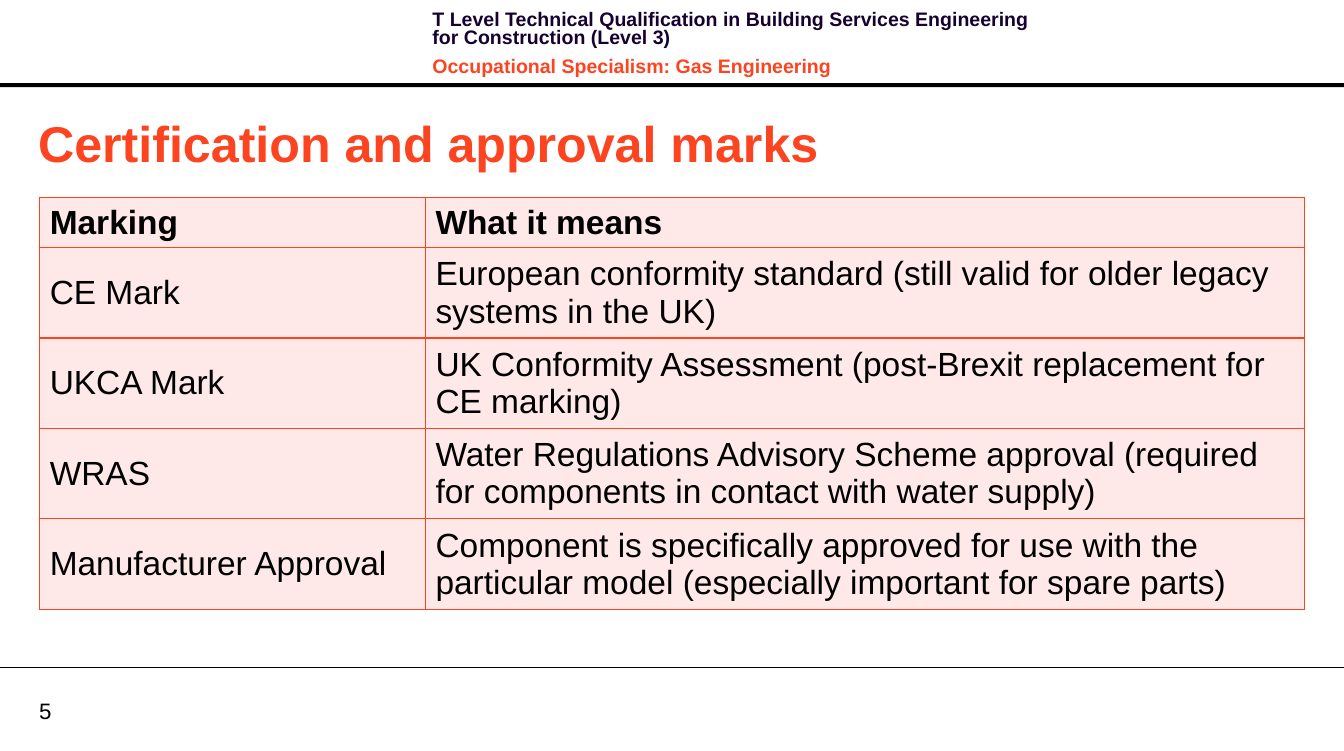
from lxml.etree import SubElement
from pptx import Presentation
from pptx.dml.color import RGBColor
from pptx.enum.shapes import MSO_CONNECTOR, MSO_SHAPE
from pptx.enum.text import MSO_ANCHOR
from pptx.oxml.ns import qn
from pptx.util import Pt

COLORS = {
    "black": "000000",
    "navy": "170130",
    "orange": "FC4421",
    "blush": "FEE9E8",
}
WIDTH, HEIGHT = 964, 538.6
HEADER_LINES = [
    ("T Level Technical Qualification in Building Services Engineering for Construction (Level 3)", "navy"),
    ("Occupational Specialism: Gas Engineering", "orange"),
]
MARKINGS = [
    ("Marking", "What it means"),
    ("CE Mark", "European conformity standard (still valid for older legacy systems in the UK)"),
    ("UKCA Mark", "UK Conformity Assessment (post-Brexit replacement for CE marking)"),
    ("WRAS", "Water Regulations Advisory Scheme approval (required for components in contact with water supply)"),
    ("Manufacturer Approval", "Component is specifically approved for use with the particular model "
                              "(especially important for spare parts)"),
]


def color(name):
    return RGBColor.from_string(COLORS[name])


class SlideBuilder:
    font_name = "Arial"

    def __init__(self, slide):
        self.slide = slide

    def style(self, paragraph, size, color_name, bold=False):
        for run in paragraph.runs:
            run.font.name = self.font_name
            run.font.size = Pt(size)
            run.font.bold = bold
            run.font.color.rgb = color(color_name)

    def bar(self, left, top, width, height, color_name):
        shape = self.slide.shapes.add_shape(
            MSO_SHAPE.RECTANGLE, Pt(left), Pt(top), Pt(width), Pt(height))
        shape.shadow.inherit = False
        shape.fill.solid()
        shape.fill.fore_color.rgb = color(color_name)
        shape.line.fill.background()

    def rule(self, top, color_name, weight):
        """Draw a horizontal line across the whole slide."""
        connector = self.slide.shapes.add_connector(
            MSO_CONNECTOR.STRAIGHT, Pt(0), Pt(top), Pt(WIDTH), Pt(top))
        connector.line.color.rgb = color(color_name)
        connector.line.width = Pt(weight)
        SubElement(connector.element.spPr, qn("a:effectLst"))

    def text(self, left, top, width, height, lines, size, bold=False,
             anchor=MSO_ANCHOR.MIDDLE, insets=(7.2, 3.6), line_spacing=None, gap=0):
        """Add a text box; lines holds pairs of wording and colour name."""
        shape = self.slide.shapes.add_textbox(Pt(left), Pt(top), Pt(width), Pt(height))
        frame = shape.text_frame
        frame.word_wrap = True
        frame.vertical_anchor = anchor
        frame.margin_left = frame.margin_right = Pt(insets[0])
        frame.margin_top = frame.margin_bottom = Pt(insets[1])
        frame.text = "\n".join(wording for wording, _ in lines)
        for index, (paragraph, (_, color_name)) in enumerate(zip(frame.paragraphs, lines)):
            if line_spacing:
                paragraph.line_spacing = Pt(line_spacing)
            if index:
                paragraph.space_before = Pt(gap)
            self.style(paragraph, size, color_name, bold)

    def border(self, cell, color_name, weight):
        properties = cell._tc.get_or_add_tcPr()
        for position, side in enumerate(("a:lnL", "a:lnR", "a:lnT", "a:lnB")):
            line = SubElement(properties, qn(side), w=str(Pt(weight)))
            fill = SubElement(line, qn("a:solidFill"))
            SubElement(fill, qn("a:srgbClr"), val=COLORS[color_name])
            properties.insert(position, line)

    def table(self, left, top, column_widths, row_heights, rows, size):
        frame = self.slide.shapes.add_table(
            len(rows), len(column_widths), Pt(left), Pt(top),
            Pt(sum(column_widths)), Pt(sum(row_heights)))
        table = frame.table
        for column, width in zip(table.columns, column_widths):
            column.width = Pt(width)
        for row_index, (row, height, wordings) in enumerate(zip(table.rows, row_heights, rows)):
            row.height = Pt(height)
            for cell, wording in zip(row.cells, wordings):
                cell.text_frame.text = wording
                cell.vertical_anchor = MSO_ANCHOR.MIDDLE
                cell.fill.solid()
                cell.fill.fore_color.rgb = color("blush")
                self.border(cell, "orange", 1)
                self.style(cell.text_frame.paragraphs[0], size, "black", bold=row_index == 0)


def main():
    presentation = Presentation()
    presentation.slide_width = Pt(WIDTH)
    presentation.slide_height = Pt(HEIGHT)
    builder = SlideBuilder(presentation.slides.add_slide(presentation.slide_layouts[6]))

    builder.bar(0, 59.7, WIDTH, 2.9, "black")
    builder.text(28, 499.7, 46, 19.4, [("5", "black")], 16, insets=(0, 0))
    builder.rule(478.8, "black", 0.75)
    builder.text(303.1, 5, 458.6, 46, HEADER_LINES, 14, bold=True,
                 anchor=MSO_ANCHOR.TOP, line_spacing=13.1, gap=8)
    builder.text(20.2, 76.3, 915.8, 51.1,
                 [("Certification and approval marks", "orange")], 36, bold=True)
    builder.table(28.5, 141.6, [276.7, 630.3], [34.2] + [60.7] * 4, MARKINGS, 24)

    presentation.save("out.pptx")


if __name__ == "__main__":
    main()
